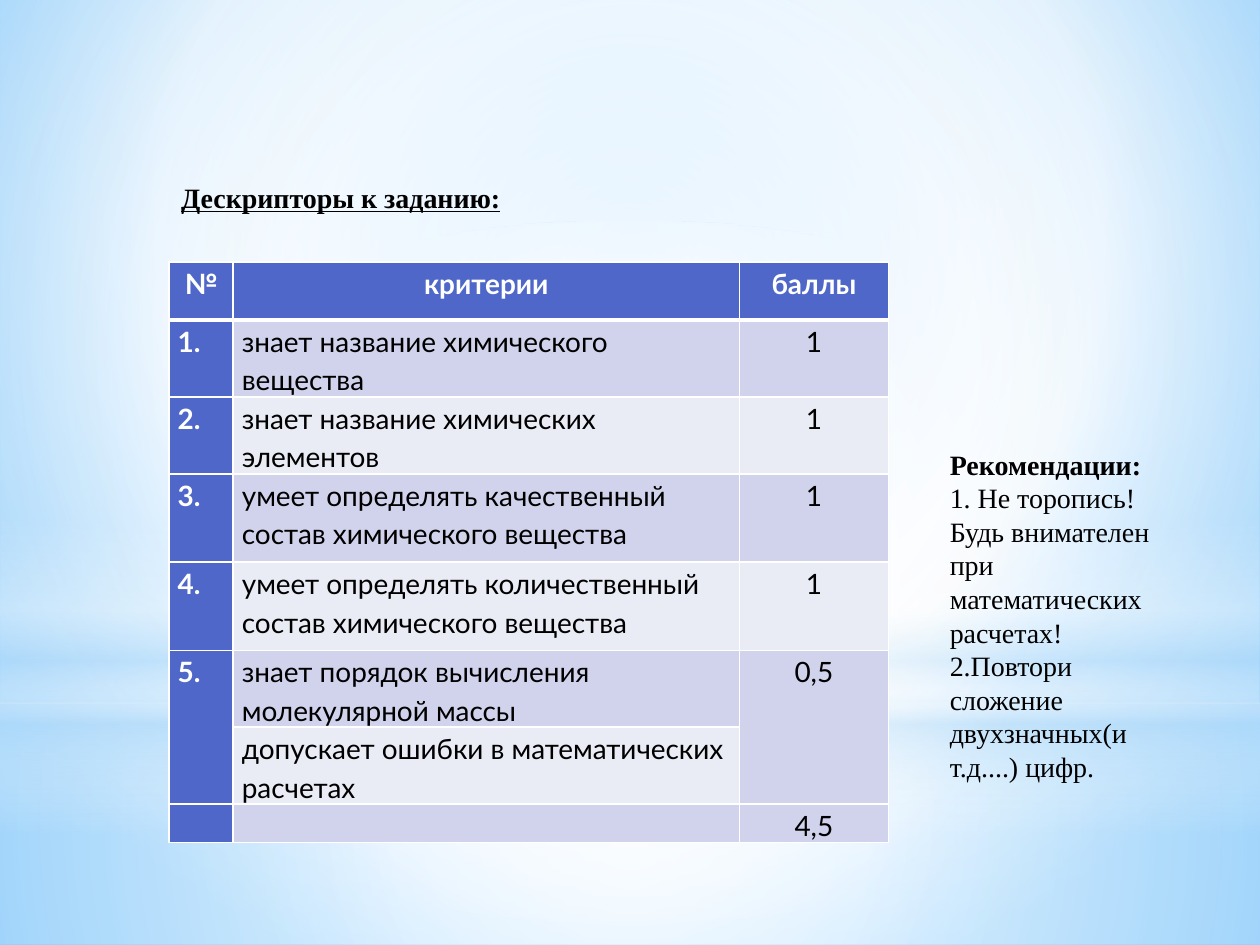
"""Build a slide with a grading table and study advice."""
from pptx import Presentation, util as u
from pptx.dml import color
from pptx.enum import shapes, text
from pptx.oxml import ns, parse_xml

THEME = {
    "head": "4E67C8", "odd": "D0D3EB", "even": "E9EBF5",
    "light": "FFFFFF", "dark": "000000", "sky": "B4DCFA",
    "near": "9ED5FF", "far": "5BB9FF",
    "grid": "Lato", "note": "Times New Roman", "size": 16,
}
TITLE = "Дескрипторы к заданию:"
ADVICE = [
    "Рекомендации:",
    "1. Не торопись! Будь внимателен при математических расчетах!",
    "2.Повтори сложение двухзначных(и т.д....) цифр.",
]
ROWS = [
    ("№", "критерии", "баллы"),
    ("1.", "знает название химического вещества", "1"),
    ("2.", "знает название химических элементов", "1"),
    ("3.", "умеет определять качественный состав химического вещества", "1"),
    ("4.", "умеет определять количественный состав химического вещества", "1"),
    ("5.", "знает порядок вычисления молекулярной массы", "0,5"),
    ("", "допускает ошибки в математических расчетах", ""),
    ("", "", "4,5"),
]
WIDTHS = [0.51, 4.02, 1.18]
HEIGHTS = [0.46, 0.61, 0.61, 0.7, 0.7, 0.61, 0.61, 0.3]
MERGED = [0, 2]

BACK = [(0, "near", 100), (60, "light", 100), (100, "far", 100)]
MID = (50, 50, 50, 50)
LAYERS = [
    ("RECTANGLE", (0, 5.58, 10, 1.92), MID,
     [(0, "light", 91), (37, "light", 76), (100, "sky", 79)]),
    ("RECTANGLE", (0, 0, 10, 5.58), MID,
     [(0, "light", 89), (48, "light", 62), (100, "sky", 79)]),
    ("RECTANGLE", (0, 4.12, 10, 2.5), None,
     [(0, "light", 0), (29, "light", 30), (45, "sky", 40),
      (55, "light", 26), (65, "sky", 60), (100, "light", 0)]),
    ("OVAL", (0, 1.75, 10, 5.58), MID,
     [(0, "light", 100), (56, "light", 0)]),
]


def rgb(key):
    return color.RGBColor.from_string(THEME[key])


def blend(host, stops, focus):
    marks = "".join(
        f'<a:gs pos="{pos * 1000}"><a:srgbClr val="{THEME[key]}">'
        f'<a:alpha val="{alpha * 1000}"/></a:srgbClr></a:gs>'
        for pos, key, alpha in stops)
    way = '<a:lin ang="5400000" scaled="0"/>'
    if focus:
        sides = " ".join(f'{side}="{val * 1000}"' for side, val in zip("ltrb", focus))
        way = f'<a:path path="circle"><a:fillToRect {sides}/></a:path>'
    old = host.find(ns.qn("a:noFill"))
    host.replace(old, parse_xml(
        f'<a:gradFill {ns.nsdecls("a")} rotWithShape="1">'
        f'<a:gsLst>{marks}</a:gsLst>{way}</a:gradFill>'))


def style(para, face, key, bold):
    font = para.font
    font.name, font.size, font.bold = THEME[face], u.Pt(THEME["size"]), bold
    font.color.rgb = rgb(key)


def edge(cell, top):
    props = cell._tc.get_or_add_tcPr()
    for spot, side in enumerate("LRTB"):
        width = 3 if top and side == "B" else 1
        props.insert(spot, parse_xml(
            f'<a:ln{side} {ns.nsdecls("a")} w="{u.Pt(width)}"><a:solidFill>'
            f'<a:srgbClr val="{THEME["light"]}"/></a:solidFill></a:ln{side}>'))


def box(slide, place, lines):
    frame = slide.shapes.add_textbox(*map(u.Inches, place)).text_frame
    frame.word_wrap = True
    frame.auto_size = text.MSO_AUTO_SIZE.SHAPE_TO_FIT_TEXT
    frame.text = "\n".join(lines)
    for num, para in enumerate(frame.paragraphs):
        style(para, "note", "dark", num == 0)
    return frame


def backdrop(slide):
    slide.background.fill.background()
    blend(slide._element.find(".//" + ns.qn("p:bgPr")), BACK, (20, 10, 20, 60))
    for kind, place, focus, stops in LAYERS:
        shape = slide.shapes.add_shape(
            getattr(shapes.MSO_SHAPE, kind), *map(u.Inches, place))
        shape.shadow.inherit = False
        shape.line.fill.background()
        shape.fill.background()
        blend(shape._element.spPr, stops, focus)


def grid(slide):
    place = (1.34, 2.08, sum(WIDTHS), sum(HEIGHTS))
    table = slide.shapes.add_table(
        len(ROWS), len(WIDTHS), *map(u.Inches, place)).table
    for col, width in zip(table.columns, WIDTHS):
        col.width = u.Inches(width)
    for row, height in zip(table.rows, HEIGHTS):
        row.height = u.Inches(height)
    for r, row in enumerate(ROWS):
        for c, words in enumerate(row):
            cell = table.cell(r, c)
            main = r == 0 or c == 0
            cell.margin_left = cell.margin_right = u.Inches(0.07)
            cell.margin_top = cell.margin_bottom = 0
            cell.fill.solid()
            cell.fill.fore_color.rgb = rgb(
                "head" if main else "odd" if r % 2 else "even")
            edge(cell, r == 0)
            cell.text = words
            para = cell.text_frame.paragraphs[0]
            style(para, "grid", "light" if main else "dark", main)
            if words:
                para.line_spacing = 1.15
            if r == 0 or c == 2:
                para.alignment = text.PP_ALIGN.CENTER
    for c in MERGED:
        table.cell(5, c).merge(table.cell(6, c))


def main():
    deck = Presentation()
    deck.slide_width, deck.slide_height = u.Inches(10), u.Inches(7.5)
    slide = deck.slides.add_slide(deck.slide_layouts[6])
    backdrop(slide)
    grid(slide)
    title = box(slide, (1.34, 1.38, 7.13, 0.37), [TITLE])
    title.vertical_anchor = text.MSO_ANCHOR.MIDDLE
    title.paragraphs[0].font.underline = True
    box(slide, (7.44, 3.5, 2.1, 2.79), ADVICE)
    deck.save("out.pptx")


if __name__ == "__main__":
    main()
